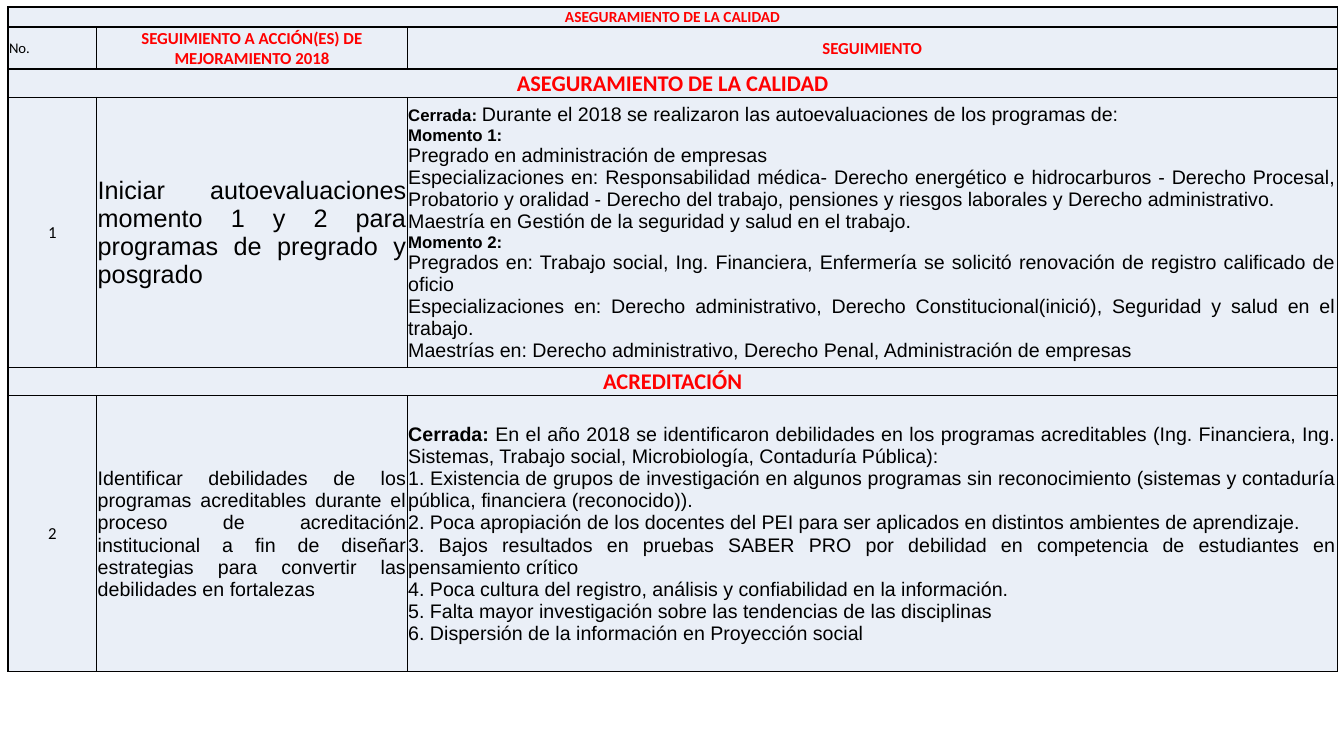
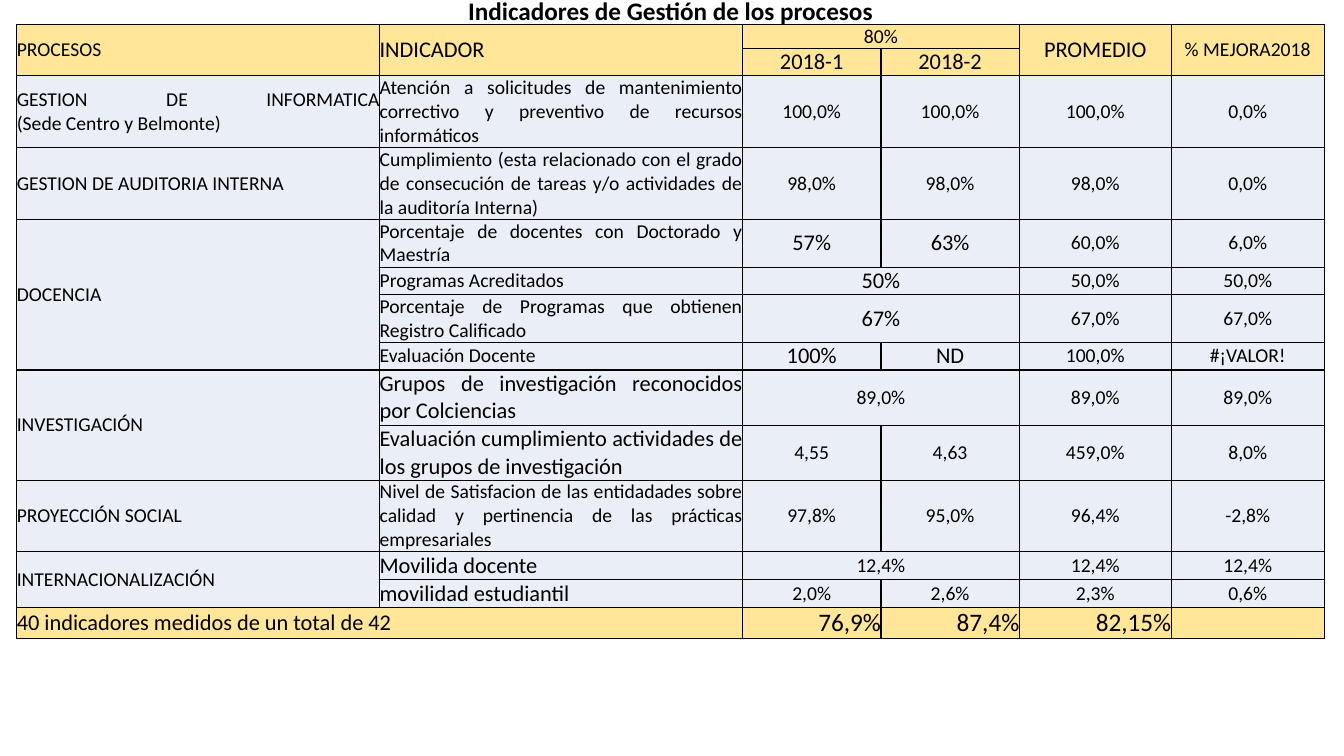
import pptx
import pptx.util
import pptx.dml.color
import pptx.enum.text
import pptx.oxml.ns
import lxml.etree

RED = pptx.dml.color.RGBColor(0xFF, 0x00, 0x00)
BLACK = pptx.dml.color.RGBColor(0x00, 0x00, 0x00)
PALE_BLUE = pptx.dml.color.RGBColor(0xEA, 0xEF, 0xF7)
YELLOW = pptx.dml.color.RGBColor(0xFF, 0xE6, 0x99)
CENTER = pptx.enum.text.PP_ALIGN.CENTER
JUSTIFY = pptx.enum.text.PP_ALIGN.JUSTIFY
LEFT = pptx.enum.text.PP_ALIGN.LEFT
RIGHT = pptx.enum.text.PP_ALIGN.RIGHT
MIDDLE = pptx.enum.text.MSO_ANCHOR.MIDDLE
BOTTOM = pptx.enum.text.MSO_ANCHOR.BOTTOM

presentation = pptx.Presentation()
presentation.slide_width = pptx.util.Inches(13.33)
presentation.slide_height = pptx.util.Inches(7.5)
COLUMN = presentation.slide_width / 100
ROW = presentation.slide_height / 100


def write_text(text_frame, text, size=14, font="Calibri", color=BLACK, bold=False,
               align=CENTER, lead_size=None):
    for index, line in enumerate(text.split("\n")):
        paragraph = text_frame.paragraphs[0] if index == 0 else text_frame.add_paragraph()
        paragraph.alignment = align
        lead, mark, rest = line.partition("|")
        parts = [(lead, True, lead_size or size), (rest, False, size)] if mark else [(line, bold, size)]
        for part, part_bold, part_size in parts:
            for number, piece in enumerate(part.split("\v")):
                if number:
                    paragraph.add_line_break()
                    line_break = paragraph._p[-1]
                    properties = lxml.etree.SubElement(line_break, pptx.oxml.ns.qn("a:rPr"))
                    properties.set("sz", str(part_size * 100))
                if piece:
                    run = paragraph.add_run()
                    run.text = piece
                    run.font.name = font
                    run.font.size = pptx.util.Pt(part_size)
                    run.font.bold = part_bold
                    run.font.color.rgb = color


def add_grid(slide, left, top, columns, rows, margin, yellow_rows=()):
    shape = slide.shapes.add_table(
        len(rows), len(columns), int(left * COLUMN), int(top * ROW),
        int(sum(columns) * COLUMN), int(sum(rows) * ROW))
    table = shape.table
    table.first_row = False
    table.horz_banding = False
    for index, share in enumerate(columns):
        table.columns[index].width = int(share * COLUMN)
    for index, share in enumerate(rows):
        table.rows[index].height = int(share * ROW)
        for cell in table.rows[index].cells:
            cell.margin_left = cell.margin_right = cell.margin_top = pptx.util.Inches(margin)
            cell.margin_bottom = 0
            cell.vertical_anchor = MIDDLE
            cell_properties = cell._tc.get_or_add_tcPr()
            for side in ("a:lnL", "a:lnR", "a:lnT", "a:lnB"):
                border = lxml.etree.SubElement(cell_properties, pptx.oxml.ns.qn(side), w="12700")
                border_fill = lxml.etree.SubElement(border, pptx.oxml.ns.qn("a:solidFill"))
                lxml.etree.SubElement(border_fill, pptx.oxml.ns.qn("a:srgbClr"), val=str(BLACK))
            cell.fill.solid()
            cell.fill.fore_color.rgb = YELLOW if index in yellow_rows else PALE_BLUE
    return table


FIRST_FOLLOW_UP = """Cerrada: |Durante el 2018 se realizaron las autoevaluaciones de los programas de:
Momento 1:|
Pregrado en administración de empresas
Especializaciones en: Responsabilidad médica- Derecho energético e hidrocarburos - Derecho Procesal, Probatorio y oralidad - Derecho del trabajo, pensiones y riesgos laborales y Derecho administrativo.
Maestría en Gestión de la seguridad y salud en el trabajo.
Momento 2:|
Pregrados en: Trabajo social, Ing. Financiera, Enfermería se solicitó renovación de registro calificado de oficio
Especializaciones en: Derecho administrativo, Derecho Constitucional(inició), Seguridad y salud en el trabajo.
Maestrías en: Derecho administrativo, Derecho Penal, Administración de empresas"""

SECOND_FOLLOW_UP = """Cerrada: |En el año 2018 se identificaron debilidades en los programas acreditables (Ing. Financiera, Ing. Sistemas, Trabajo social, Microbiología, Contaduría Pública):
1. Existencia de grupos de investigación en algunos programas sin reconocimiento (sistemas y contaduría pública, financiera (reconocido)).
2. Poca apropiación de los docentes del PEI para ser aplicados en distintos ambientes de aprendizaje.
3. Bajos resultados en pruebas SABER PRO por debilidad en competencia de estudiantes en pensamiento crítico
4. Poca cultura del registro, análisis y confiabilidad en la información.
5. Falta mayor investigación sobre las tendencias de las disciplinas
6. Dispersión de la información en Proyección social"""

quality_slide = presentation.slides.add_slide(presentation.slide_layouts[6])
quality_table = add_grid(quality_slide, 0.6, 0.93, [6.6, 23.1, 69.2],
                         [2.5, 5.55, 3.7, 35.7, 3.7, 36.5], 0.01)

for row, heading, size in [(0, "ASEGURAMIENTO DE LA CALIDAD", 11),
                           (2, "ASEGURAMIENTO DE LA CALIDAD", 16),
                           (4, "ACREDITACIÓN", 16)]:
    quality_table.cell(row, 0).merge(quality_table.cell(row, 2))
    write_text(quality_table.cell(row, 0).text_frame, heading, size=size, color=RED, bold=True)

write_text(quality_table.cell(1, 0).text_frame, "No.", size=10.5, align=JUSTIFY)
for column, heading in enumerate(["SEGUIMIENTO A ACCIÓN(ES) DE MEJORAMIENTO 2018", "SEGUIMIENTO"], 1):
    write_text(quality_table.cell(1, column).text_frame, heading, size=12, color=RED, bold=True)

actions = [
    (3, "1", "Iniciar autoevaluaciones momento 1 y 2 para programas de pregrado y posgrado", 18,
     FIRST_FOLLOW_UP, 12),
    (5, "2", "Identificar debilidades de los programas acreditables durante el proceso de acreditación "
     "institucional a fin de diseñar estrategias para convertir las debilidades en fortalezas", 14,
     SECOND_FOLLOW_UP, 14),
]
for row, number, action, action_size, follow_up, lead_size in actions:
    write_text(quality_table.cell(row, 0).text_frame, number, size=12)
    write_text(quality_table.cell(row, 1).text_frame, action, size=action_size, font="Arial", align=JUSTIFY)
    write_text(quality_table.cell(row, 2).text_frame, follow_up, font="Arial", align=JUSTIFY,
               lead_size=lead_size)

indicator_slide = presentation.slides.add_slide(presentation.slide_layouts[5])
title = indicator_slide.shapes.title
title.left, title.top = int(3.45 * COLUMN), 0
title.width, title.height = int(92.9 * COLUMN), int(4.13 * ROW)
title.text_frame.auto_size = pptx.enum.text.MSO_AUTO_SIZE.NONE
title.text_frame.vertical_anchor = BOTTOM
write_text(title.text_frame, "Indicadores de Gestión de los procesos", size=18, bold=True)
title.text_frame.paragraphs[0].line_spacing = 0.9

indicator_table = add_grid(
    indicator_slide, 1.25, 3.2, [27, 27, 10.3, 10.3, 11.3, 11.4],
    [3.2, 3.6, 9.5, 9.5, 6.2, 3.6, 6.35, 3.6, 7.3, 7.3, 9.4, 3.7, 3.6, 4.1], 0, yellow_rows=(0, 1, 13))

for column, heading, size, align in [(0, "PROCESOS", 14, JUSTIFY), (1, "INDICADOR", 16, JUSTIFY),
                                     (4, "PROMEDIO", 16, CENTER), (5, "% MEJORA2018", 14, CENTER)]:
    indicator_table.cell(0, column).merge(indicator_table.cell(1, column))
    write_text(indicator_table.cell(0, column).text_frame, heading, size=size, align=align)
indicator_table.cell(0, 2).merge(indicator_table.cell(0, 3))
for row, column, heading, size in [(0, 2, "80%", 14), (1, 2, "2018-1", 16), (1, 3, "2018-2", 16)]:
    indicator_table.cell(row, column).vertical_anchor = BOTTOM
    write_text(indicator_table.cell(row, column).text_frame, heading, size=size)

processes = [
    ("GESTION DE INFORMATICA\v(Sede Centro y Belmonte)", 1),
    ("GESTION DE AUDITORIA INTERNA", 1),
    ("DOCENCIA", 4),
    ("INVESTIGACIÓN", 2),
    ("PROYECCIÓN SOCIAL", 1),
    ("INTERNACIONALIZACIÓN", 2),
]
row = 2
for process, span in processes:
    if span > 1:
        indicator_table.cell(row, 0).merge(indicator_table.cell(row + span - 1, 0))
    write_text(indicator_table.cell(row, 0).text_frame, process, align=JUSTIFY)
    row += span

indicators = [
    ("Atención a solicitudes de mantenimiento correctivo y preventivo de recursos informáticos", 14,
     ["100,0%", "100,0%"], 14, "100,0%", "0,0%"),
    ("Cumplimiento (esta relacionado con el grado de consecución de tareas y/o actividades de la "
     "auditoría Interna)", 14, ["98,0%", "98,0%"], 14, "98,0%", "0,0%"),
    ("Porcentaje de docentes con Doctorado y Maestría", 14, ["57%", "63%"], 16, "60,0%", "6,0%"),
    ("Programas Acreditados", 14, ["50%"], 16, "50,0%", "50,0%"),
    ("Porcentaje de Programas que obtienen Registro Calificado", 14, ["67%"], 16, "67,0%", "67,0%"),
    ("Evaluación Docente", 14, ["100%", "ND"], 16, "100,0%", "#¡VALOR!"),
    ("Grupos de investigación reconocidos por Colciencias", 16, ["89,0%"], 14, "89,0%", "89,0%"),
    ("Evaluación cumplimiento actividades de los grupos de investigación", 16,
     ["4,55", "4,63"], 14, "459,0%", "8,0%"),
    ("Nivel de Satisfacion de las entidadades sobre calidad y pertinencia de las prácticas empresariales",
     14, ["97,8%", "95,0%"], 14, "96,4%", "-2,8%"),
    ("Movilida docente", 16, ["12,4%"], 14, "12,4%", "12,4%"),
    ("movilidad estudiantil", 16, ["2,0%", "2,6%"], 14, "2,3%", "0,6%"),
]
for row, (indicator, size, values, value_size, average, improvement) in enumerate(indicators, 2):
    write_text(indicator_table.cell(row, 1).text_frame, indicator, size=size, align=JUSTIFY)
    if len(values) == 1:
        indicator_table.cell(row, 2).merge(indicator_table.cell(row, 3))
    for column, value in enumerate(values, 2):
        write_text(indicator_table.cell(row, column).text_frame, value, size=value_size)
    write_text(indicator_table.cell(row, 4).text_frame, average)
    write_text(indicator_table.cell(row, 5).text_frame, improvement)

indicator_table.cell(13, 0).merge(indicator_table.cell(13, 1))
write_text(indicator_table.cell(13, 0).text_frame, "40 indicadores medidos de un total de 42",
           size=16, align=LEFT)
for column, total in enumerate(["76,9%", "87,4%", "82,15%"], 2):
    indicator_table.cell(13, column).vertical_anchor = BOTTOM
    write_text(indicator_table.cell(13, column).text_frame, total, size=18, align=RIGHT)

presentation.save("out.pptx")
